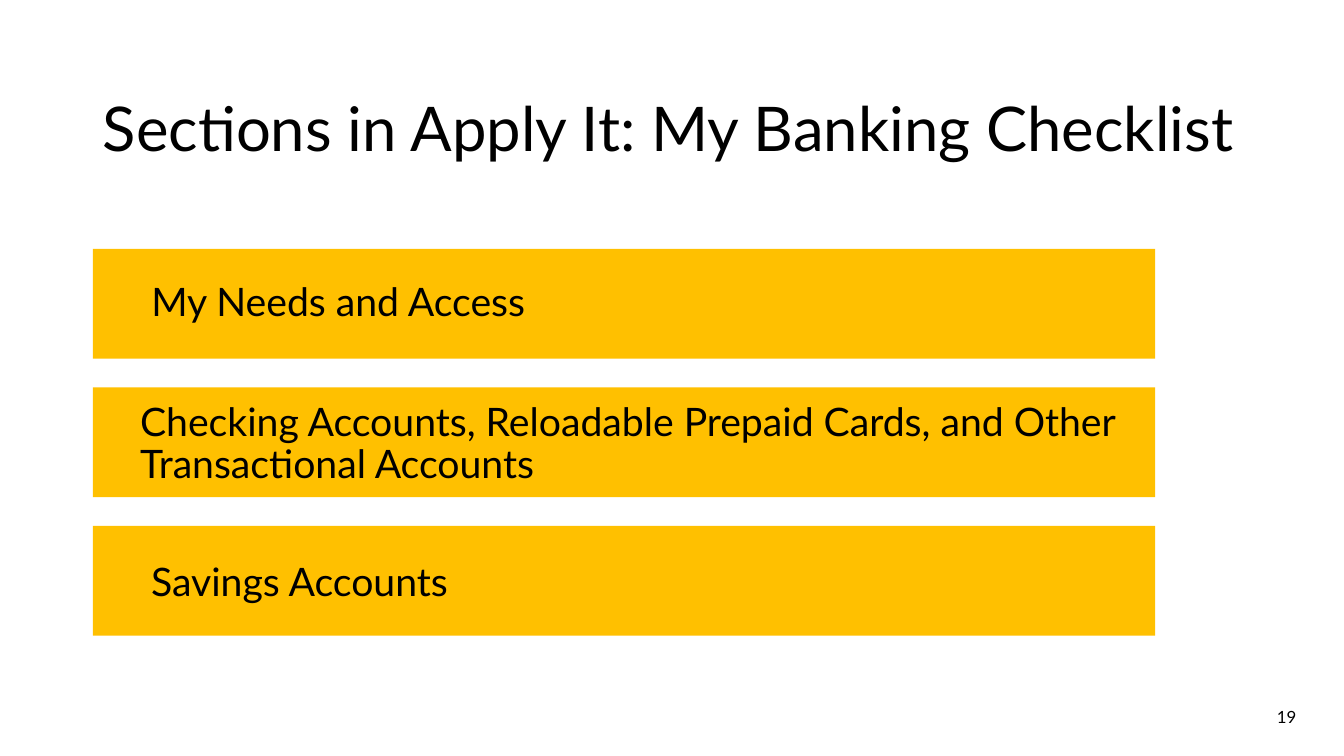
from lxml.etree import SubElement
from pptx import Presentation
from pptx.dml.color import RGBColor
from pptx.enum.shapes import MSO_SHAPE as Preset
from pptx.enum.text import MSO_ANCHOR as Anchor, MSO_AUTO_SIZE as AutoSize, PP_ALIGN as Align
from pptx.oxml.ns import qn
from pptx.util import Cm, Pt

COLORS = {"text": "000000", "bar": "FFC000"}
FONT = "Lato"

BAR_LEFT, BAR_TOP, BAR_WIDTH, BAR_HEIGHT = 2.34, 6.27, 26.77, 2.77
BAR_PITCH = 3.49

# Section name and its text area: left, top, width, height in cm
SECTIONS = [
    ("My Needs and Access", (3.56, 6.99, 28.37, 2.06)),
    ("Checking Accounts, Reloadable Prepaid Cards, and Other Transactional Accounts",
     (3.28, 10.01, 25.3, 2.08)),
    ("Savings Accounts", (3.56, 14.05, 28.37, 1.96)),
]


def place(box, area):
    box.left, box.top, box.width, box.height = (Cm(length) for length in area)


def write(box, text, size=28, align=Align.LEFT, anchor=Anchor.TOP, line_spacing=0.9):
    frame = box.text_frame
    frame.word_wrap = True
    frame.auto_size = AutoSize.NONE
    frame.vertical_anchor = anchor
    para = frame.paragraphs[0]
    para.alignment = align
    para.line_spacing = line_spacing
    para.space_before = Pt(0)
    span = para.add_run()
    span.text = text
    span.font.name = FONT
    span.font.size = Pt(size)
    span.font.color.rgb = RGBColor.from_string(COLORS["text"])


def remove_bullet(para):
    properties = para._p.get_or_add_pPr()
    properties.set("marL", "0")
    properties.set("indent", "0")
    SubElement(properties, qn("a:buNone"))


def add_bar(page, row):
    top = BAR_TOP + row * BAR_PITCH
    bar = page.shapes.add_shape(
        Preset.RECTANGLE, Cm(BAR_LEFT), Cm(top), Cm(BAR_WIDTH), Cm(BAR_HEIGHT))
    bar.shadow.inherit = False
    bar.fill.solid()
    bar.fill.fore_color.rgb = RGBColor.from_string(COLORS["bar"])
    bar.line.fill.background()
    return bar


def add_text(page, text, area, **text_format):
    box = page.shapes.add_textbox(*(Cm(length) for length in area))
    write(box, text, **text_format)


def main():
    deck = Presentation()
    deck.slide_width, deck.slide_height = Cm(33.87), Cm(19.05)
    page = deck.slides.add_slide(deck.slide_layouts[1])
    title, body = page.shapes.title, page.placeholders[1]

    # Title
    place(title, (2.34, 1.47, 29.21, 3.68))
    write(title, "Sections in Apply It: My Banking Checklist", size=44, anchor=Anchor.MIDDLE)

    # Bars, kept behind the body text
    for row in range(len(SECTIONS)):
        body.element.addprevious(add_bar(page, row).element)

    # Section names: the first in the body placeholder, the rest in text boxes
    (first_name, first_area), *other_sections = SECTIONS
    place(body, first_area)
    remove_bullet(body.text_frame.paragraphs[0])
    write(body, first_name)
    for name, area in other_sections:
        add_text(page, name, area)

    # Page number
    add_text(page, "19", (23.7, 17.55, 9.22, 1.02), size=12, align=Align.RIGHT,
             anchor=Anchor.MIDDLE, line_spacing=1.0)

    deck.save("out.pptx")


if __name__ == "__main__":
    main()
